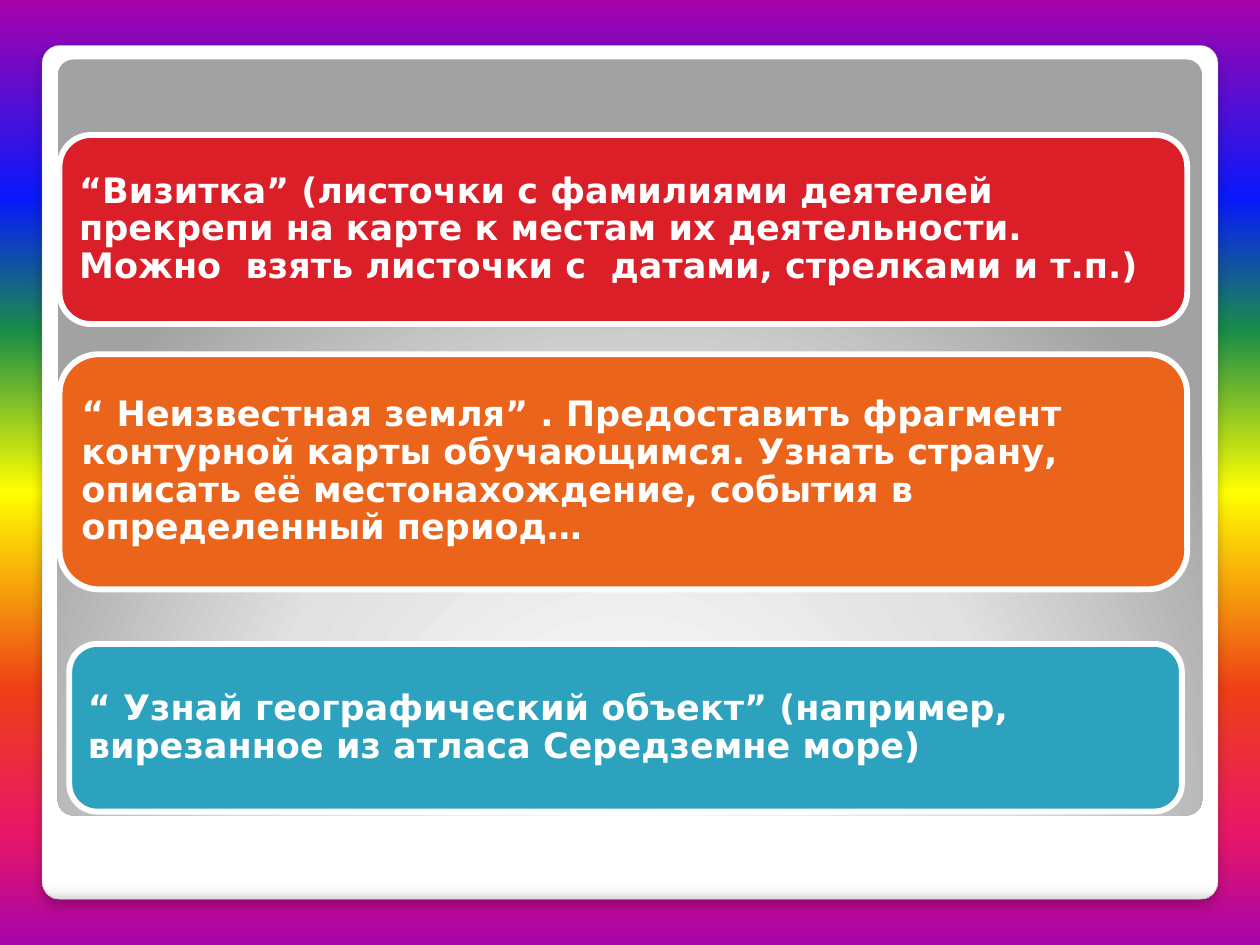
from dataclasses import dataclass

from lxml.etree import SubElement
from pptx import Presentation
from pptx.dml.color import RGBColor
from pptx.enum.shapes import MSO_SHAPE
from pptx.enum.text import MSO_ANCHOR, PP_ALIGN
from pptx.oxml.ns import qn
from pptx.util import Pt


@dataclass(frozen=True)
class Theme:
    font: str = "DejaVu Sans"
    text_size: float = 20
    text: str = "FFFFFF"
    card_line: str = "FFFFFF"
    card_line_width: float = 3.35
    frame_line: str = "A4A4A4"
    shadow: str = "000000"
    red: str = "DA1F28"
    orange: str = "EB641B"
    blue: str = "2DA2BF"
    rainbow: tuple = ((0, "A603AB"), (21, "0819FB"), (35, "1A8D48"), (52, "FFFF00"),
                      (73, "EE3F17"), (88, "E81766"), (100, "A603AB"))
    frame: tuple = ((0, "FFFFFF"), (98, "FFFFFF"), (99, "F7F7F7"), (100, "DADADA"))
    panel: tuple = ((0, "FFFFFF"), (55, "E1E1E1"), (100, "A2A2A2"))


THEME = Theme()
CORNER = 1 / 6  # default corner radius of a rounded rectangle
CORNER_INSET = CORNER * (1 - 0.5 ** 0.5)  # text area clear of the corners

# Left, top, width, height, colour, text
CARDS = (
    (34, 77.2, 644.4, 108, THEME.red,
     "“Визитка” (листочки с фамилиями деятелей прекрепи на карте к местам их "
     "деятельности. Можно  взять листочки с  датами, стрелками и т.п.)"),
    (34, 202.4, 644.4, 134.4, THEME.orange,
     "“ Неизвестная земля” . Предоставить фрагмент контурной карты обучающимся. "
     "Узнать страну, описать её местонахождение, события в определенный период…"),
    (39.6, 368, 635.8, 95.8, THEME.blue,
     "“ Узнай географический объект” (например, вирезанное из атласа "
     "Середземне море)"),
)


def set_gradient(owner, fill, stops, center=None):
    """Fill downwards, or outwards from a focus given as l, t, r, b percentages."""
    fill.gradient()
    gradient = owner.element.find(".//" + qn("a:gradFill"))
    for child in list(gradient):
        gradient.remove(child)
    stop_list = SubElement(gradient, qn("a:gsLst"))
    for position, color in stops:
        stop = SubElement(stop_list, qn("a:gs"), pos=str(position * 1000))
        SubElement(stop, qn("a:srgbClr"), val=color)
    if center:
        circle = SubElement(gradient, qn("a:path"), path="circle")
        edges = {side: str(value * 1000) for side, value in zip("ltrb", center)}
        SubElement(circle, qn("a:fillToRect"), **edges)
    else:
        SubElement(gradient, qn("a:lin"), ang="5400000", scaled="0")


def add_rounded(page, left, top, width, height, corner=CORNER, fill=None,
                line=None, line_width=0):
    shape = page.shapes.add_shape(MSO_SHAPE.ROUNDED_RECTANGLE, Pt(left), Pt(top),
                                  Pt(width), Pt(height))
    shape.adjustments[0] = corner
    if fill:
        shape.fill.solid()
        shape.fill.fore_color.rgb = RGBColor.from_string(fill)
    if line:
        shape.line.color.rgb = RGBColor.from_string(line)
        shape.line.width = Pt(line_width)
    else:
        shape.line.fill.background()
    shape.shadow.inherit = False
    return shape


def add_shadow(shape, color, opacity, blur, distance):
    effects = shape.element.spPr.find(qn("a:effectLst"))
    shadow = SubElement(effects, qn("a:outerShdw"), blurRad=str(Pt(blur)),
                        dist=str(Pt(distance)), dir="5400000", rotWithShape="0")
    tint = SubElement(shadow, qn("a:srgbClr"), val=color)
    SubElement(tint, qn("a:alpha"), val=str(opacity * 1000))


def add_text(page, text, left, top, width, height, size=THEME.text_size,
             color=THEME.text, bold=True, margin=6):
    box = page.shapes.add_textbox(Pt(left), Pt(top), Pt(width), Pt(height))
    frame = box.text_frame
    frame.word_wrap = True
    frame.vertical_anchor = MSO_ANCHOR.MIDDLE
    frame.margin_left = frame.margin_right = Pt(margin)
    frame.margin_top = frame.margin_bottom = Pt(margin)
    para = frame.paragraphs[0]
    para.alignment = PP_ALIGN.LEFT
    para.line_spacing = 0.9
    para.space_after = Pt(7)
    span = para.add_run()
    span.text = text
    span.font.name = THEME.font
    span.font.size = Pt(size)
    span.font.bold = bold
    span.font.color.rgb = RGBColor.from_string(color)


def add_card(page, left, top, width, height, color, text):
    add_rounded(page, left, top, width, height, fill=color,
                line=THEME.card_line, line_width=THEME.card_line_width)
    inset = height * CORNER_INSET
    add_text(page, text, left + inset, top + inset,
             width - 2 * inset, height - 2 * inset)


def main():
    deck = Presentation()
    deck.slide_width, deck.slide_height = Pt(720), Pt(540)
    page = deck.slides.add_slide(deck.slide_layouts[6])

    # Rainbow background
    set_gradient(page, page.background.fill, THEME.rainbow)

    # White frame and grey panel
    frame = add_rounded(page, 24, 25.9, 672, 488, corner=0.021,
                        line=THEME.frame_line, line_width=0.16)
    set_gradient(frame, frame.fill, THEME.frame)
    add_shadow(frame, THEME.shadow, opacity=25, blur=6, distance=4)
    panel = add_rounded(page, 33, 34, 654, 432, corner=0.021)
    set_gradient(panel, panel.fill, THEME.panel, center=(50, 175, 50, -75))

    # Activity cards
    for card in CARDS:
        add_card(page, *card)

    deck.save("out.pptx")


if __name__ == "__main__":
    main()
